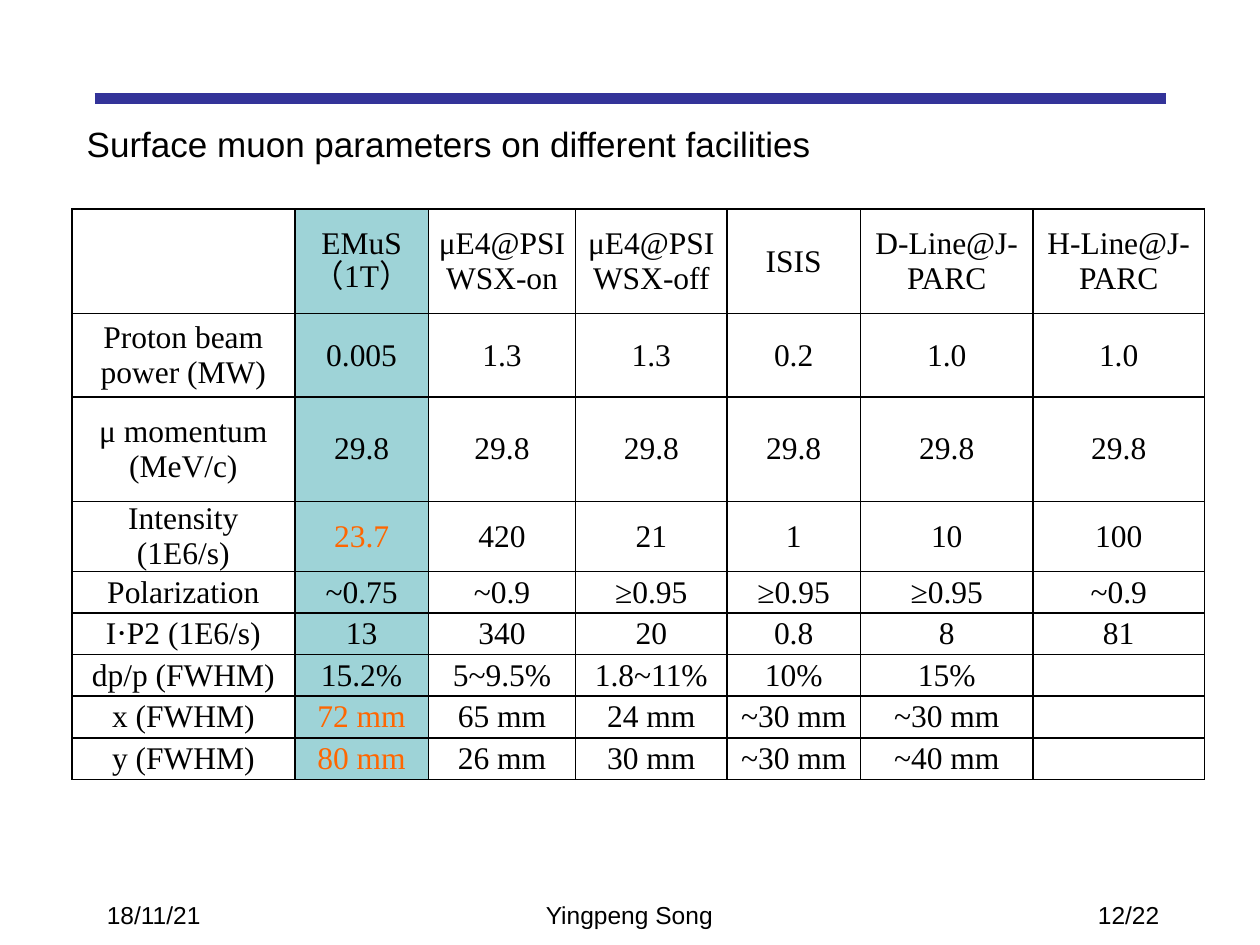
from lxml.etree import SubElement
from pptx import Presentation
from pptx.dml.color import RGBColor
from pptx.enum.shapes import MSO_CONNECTOR
from pptx.enum.text import MSO_ANCHOR, PP_ALIGN
from pptx.oxml.ns import qn
from pptx.util import Inches, Pt

BLACK = RGBColor(0x00, 0x00, 0x00)
NAVY = RGBColor(0x33, 0x33, 0x99)
TEAL = RGBColor(0x9E, 0xD3, 0xD7)
ORANGE = RGBColor(0xFF, 0x66, 0x00)

TITLE = "Surface muon parameters on different facilities"
FOOTERS = [
    ("18/11/21", 0.75, PP_ALIGN.LEFT),
    ("Yingpeng Song", 3.83, PP_ALIGN.CENTER),
    ("12/22", 6.97, PP_ALIGN.RIGHT),
]
ROWS = [
    ["", "EMuS\n（1T）", "μE4@PSI\nWSX-on", "μE4@PSI\nWSX-off", "ISIS",
     "D-Line@J-PARC", "H-Line@J-PARC"],
    ["Proton beam power (MW)", "0.005", "1.3", "1.3", "0.2", "1.0", "1.0"],
    ["μ momentum (MeV/c)"] + ["29.8"] * 6,
    ["Intensity (1E6/s)", "23.7", "420", "21", "1", "10", "100"],
    ["Polarization", "~0.75", "~0.9", "≥0.95", "≥0.95", "≥0.95", "~0.9"],
    ["I⋅P2 (1E6/s)", "13", "340", "20", "0.8", "8", "81"],
    ["dp/p (FWHM)", "15.2%", "5~9.5%", "1.8~11%", "10%", "15%", ""],
    ["x (FWHM)", "72 mm", "65 mm", "24 mm", "~30 mm", "~30 mm", ""],
    ["y (FWHM)", "80 mm", "26 mm", "30 mm", "~30 mm", "~40 mm", ""],
]
COLUMN_WIDTHS = [1.77, 1.06, 1.17, 1.2, 1.06, 1.37, 1.36]
ROW_HEIGHTS = [0.83, 0.66, 0.83, 0.55] + [0.33] * 5
EMUS_COLUMN = 1
HIGHLIGHTED_ROWS = {3, 7, 8}


def style_paragraph(paragraph, size, font_name, align, color=BLACK):
    paragraph.alignment = align
    for run in paragraph.runs:
        run.font.size = Pt(size)
        run.font.name = font_name
        run.font.color.rgb = color


def add_text(slide, text, box, size, align=PP_ALIGN.LEFT, wrap=True):
    text_frame = slide.shapes.add_textbox(*map(Inches, box)).text_frame
    text_frame.word_wrap = wrap
    text_frame.text = text
    style_paragraph(text_frame.paragraphs[0], size, "Arial", align)


def add_borders(cell):
    properties = cell._tc.get_or_add_tcPr()
    for position, side in enumerate(("lnL", "lnR", "lnT", "lnB")):
        line = SubElement(properties, qn(f"a:{side}"), w=str(Pt(1)))
        fill = SubElement(line, qn("a:solidFill"))
        SubElement(fill, qn("a:srgbClr"), val=str(BLACK))
        properties.insert(position, line)  # borders come before the fill


def fill_cell(cell, text, is_emus, color):
    cell.text = text
    cell.vertical_anchor = MSO_ANCHOR.MIDDLE
    cell.margin_left = cell.margin_right = Inches(0.07)
    cell.margin_top = cell.margin_bottom = 0
    for paragraph in cell.text_frame.paragraphs:
        paragraph.line_spacing = Pt(20)
        style_paragraph(paragraph, 18, "Times New Roman", PP_ALIGN.CENTER, color)
    if is_emus:
        cell.fill.solid()
        cell.fill.fore_color.rgb = TEAL
    else:
        cell.fill.background()
    add_borders(cell)


presentation = Presentation()
presentation.slide_width, presentation.slide_height = Inches(10), Inches(7.5)
slide = presentation.slides.add_slide(presentation.slide_layouts[6])

# Rule above the title
rule = slide.shapes.add_connector(
    MSO_CONNECTOR.STRAIGHT, Inches(0.75), Inches(0.78), Inches(9.25), Inches(0.78))
rule.line.color.rgb = NAVY
rule.line.width = Pt(6)
SubElement(rule._element.spPr, qn("a:effectLst"))

# Footer
for text, left, align in FOOTERS:
    add_text(slide, text, (left, 7.09, 2.33, 0.52), 14, align)

# Parameter table
table = slide.shapes.add_table(
    len(ROWS), len(COLUMN_WIDTHS), Inches(0.57), Inches(1.66),
    Inches(sum(COLUMN_WIDTHS)), Inches(sum(ROW_HEIGHTS))).table
table.first_row = table.horz_banding = False
for column, width in zip(table.columns, COLUMN_WIDTHS):
    column.width = Inches(width)
for row, height in zip(table.rows, ROW_HEIGHTS):
    row.height = Inches(height)
for row_index, texts in enumerate(ROWS):
    for column_index, text in enumerate(texts):
        is_emus = column_index == EMUS_COLUMN
        color = ORANGE if is_emus and row_index in HIGHLIGHTED_ROWS else BLACK
        fill_cell(table.cell(row_index, column_index), text, is_emus, color)

# Title
add_text(slide, TITLE, (0.59, 0.92, 6, 0.44), 20, wrap=False)

presentation.save("out.pptx")
